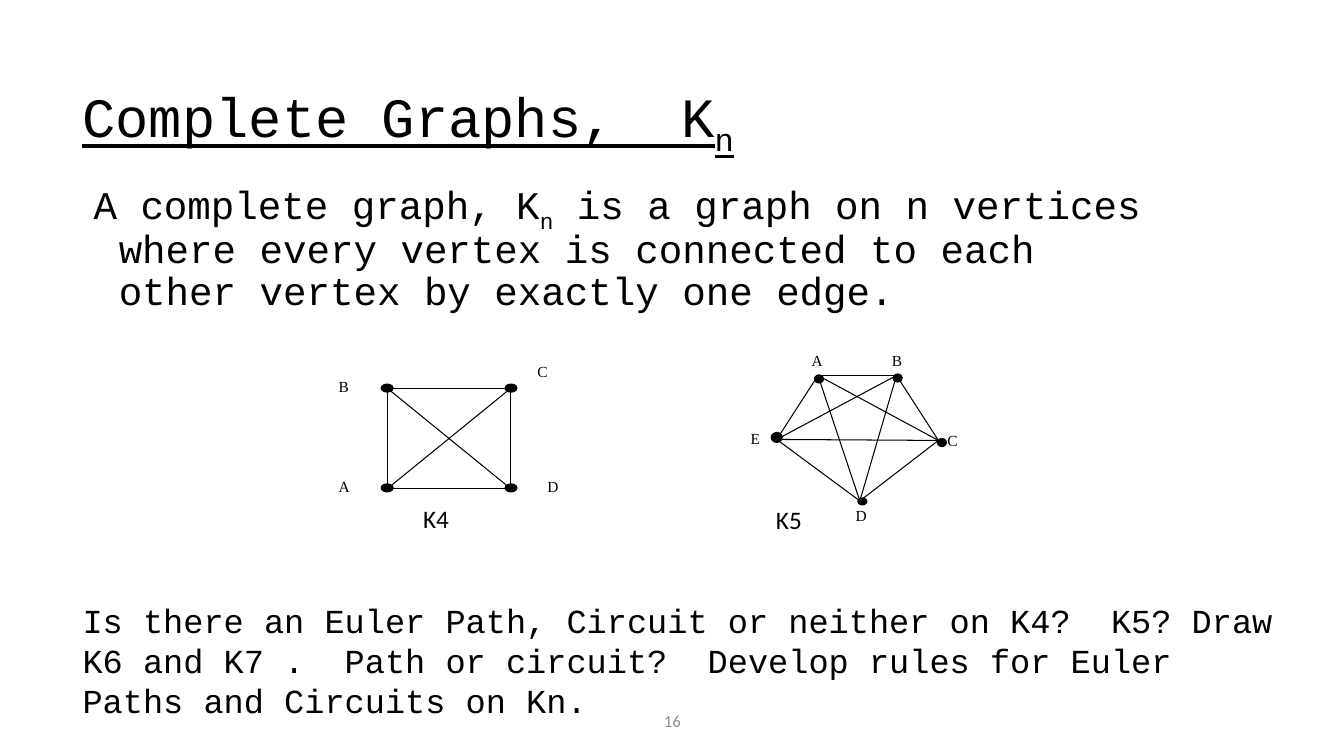
import itertools
import pptx
import pptx.dml.color
import pptx.enum.shapes
import pptx.enum.text
import pptx.util
from lxml import etree

Pt = pptx.util.Pt
RGB = pptx.dml.color.RGBColor
SHAPE = pptx.enum.shapes.MSO_SHAPE
ANCHOR = pptx.enum.text.MSO_ANCHOR
ALIGN = pptx.enum.text.PP_ALIGN

THEME = {
    "ink": RGB(0, 0, 0),
    "paper": RGB(255, 255, 255),
    "muted": RGB(0x8C, 0x8C, 0x8C),
    "mono": "Courier New",
    "sans": "Calibri",
    "serif": "Times New Roman",
    "title": 39.6,
    "body": 28,
    "question": 24,
    "caption": 18,
    "number": 12,
    "label": 11,
    "edge": 0.75,
}


def write(box, parts, size, font, color="ink", anchor=ANCHOR.TOP, align=None):
    frame = box.text_frame
    frame.word_wrap = True
    frame.vertical_anchor = anchor
    para = frame.paragraphs[0]
    para.alignment = align
    para.font.size = Pt(THEME[size])
    para.font.name = THEME[font]
    para.font.color.rgb = THEME[color]
    for text, subscript in parts:
        span = para.add_run()
        span.text = text
        if subscript:
            span._r.get_or_add_rPr().set("baseline", "-25000")
    return para


deck = pptx.Presentation()
deck.slide_width = Pt(960)
deck.slide_height = Pt(540)
page = deck.slides.add_slide(deck.slide_layouts[6])

title = page.shapes.add_textbox(Pt(51.84), Pt(21.6), Pt(748.8), Pt(90))
para = write(title, [("Complete Graphs,  K", False), ("n", True)],
             "title", "mono", anchor=ANCHOR.BOTTOM)
para.line_spacing = 0.9
para.font.underline = True

body = page.shapes.add_textbox(Pt(59.76), Pt(126), Pt(779), Pt(105.8))
para = write(body, [
    ("A complete graph, K", False),
    ("n", True),
    (" is a graph on n vertices where every vertex is connected to each "
     "other vertex by exactly one edge.", False),
], "body", "mono")
para.line_spacing = 0.9
para.space_before = Pt(10)
indent = para._p.get_or_add_pPr()
indent.set("marL", str(Pt(18)))
indent.set("indent", str(Pt(-18)))

number = page.shapes.add_textbox(Pt(318.24), Pt(500.4), Pt(324), Pt(28.8))
write(number, [("16", False)], "number", "sans", "muted", ANCHOR.MIDDLE, ALIGN.CENTER)

# name: (joint, dot centre, dot size, label box)
K4 = {
    "A": ((276.5, 349.2), (276.5, 348.5), (8.6, 5.8), (241.9, 340.6, 20.2, 19.4)),
    "B": ((276.5, 277.2), (276.5, 277.2), (8.6, 5.8), (241.9, 269.3, 25.2, 20.9)),
    "C": ((365, 277.2), (365, 277.2), (8.6, 5.8), (383.8, 258.5, 36, 23)),
    "D": ((365, 349.2), (365, 348.5), (8.6, 5.8), (391, 340.6, 20.2, 19.4)),
}
K5 = {
    "A": ((584.3, 268.2), (585, 270.7), (6.5, 5.8), (578.2, 249.1, 15.8, 16.6)),
    "B": ((640.4, 268.2), (641.2, 270), (6.5, 5.8), (635.8, 249.8, 12.2, 15.8)),
    "C": ((670.3, 314.6), (672.8, 316.1), (6.5, 5.8), (675.4, 306.7, 10.8, 14.4)),
    "D": ((614.2, 357.8), (616, 358.2), (6.5, 5), (609.8, 360, 15.8, 15.1)),
    "E": ((554.8, 313.9), (554.8, 312.5), (7.9, 7.2), (535, 305.3, 10.8, 13.7)),
}
GRAPHS = [
    (K4, SHAPE.RECTANGLE, 0, ALIGN.JUSTIFY),
    (K5, SHAPE.ROUNDED_RECTANGLE, 0.72, ALIGN.LEFT),
]

for vertices, outline, inset, align in GRAPHS:
    graph = page.shapes.add_group_shape().shapes
    for joint, (x, y), (width, height), place in vertices.values():
        dot = graph.add_shape(SHAPE.OVAL, Pt(x - width / 2), Pt(y - height / 2),
                              Pt(width), Pt(height))
        dot.shadow.inherit = False
        dot.fill.solid()
        dot.fill.fore_color.rgb = THEME["ink"]
        dot.line.color.rgb = THEME["ink"]
        dot.line.width = Pt(THEME["edge"])

    joints = [vertex[0] for vertex in vertices.values()]
    for start, end in itertools.combinations(joints, 2):
        edge = graph.add_connector(pptx.enum.shapes.MSO_CONNECTOR.STRAIGHT,
                                   *map(Pt, start + end))
        edge.line.color.rgb = THEME["ink"]
        edge.line.width = Pt(THEME["edge"])
        etree.SubElement(edge._element.spPr, pptx.oxml.ns.qn("a:effectLst"))

    for name, vertex in vertices.items():
        label = graph.add_shape(outline, *map(Pt, vertex[3]))
        label.shadow.inherit = False
        label.line.fill.background()
        if outline == SHAPE.RECTANGLE:
            label.fill.solid()
            label.fill.fore_color.rgb = THEME["paper"]
        else:
            label.fill.background()
        frame = label.text_frame
        frame.margin_left = frame.margin_right = Pt(inset)
        frame.margin_top = frame.margin_bottom = Pt(inset)
        para = write(label, [(name, False)], "label", "serif", align=align)
        para.space_after = Pt(10)

for name, x, y, width in [("K4", 295.2, 355.7, 60.5), ("K5", 547.2, 356.4, 43.2)]:
    caption = page.shapes.add_textbox(Pt(x), Pt(y), Pt(width), Pt(28.8))
    write(caption, [(name, False)], "caption", "sans")

question = page.shapes.add_textbox(Pt(51.84), Pt(424.8), Pt(864.7), Pt(65.5))
write(question, [(
    "Is there an Euler Path, Circuit or neither on K4?  K5? Draw K6 and K7 .  "
    "Path or circuit?  Develop rules for Euler Paths and Circuits on Kn.", False,
)], "question", "mono")

deck.save("out.pptx")
